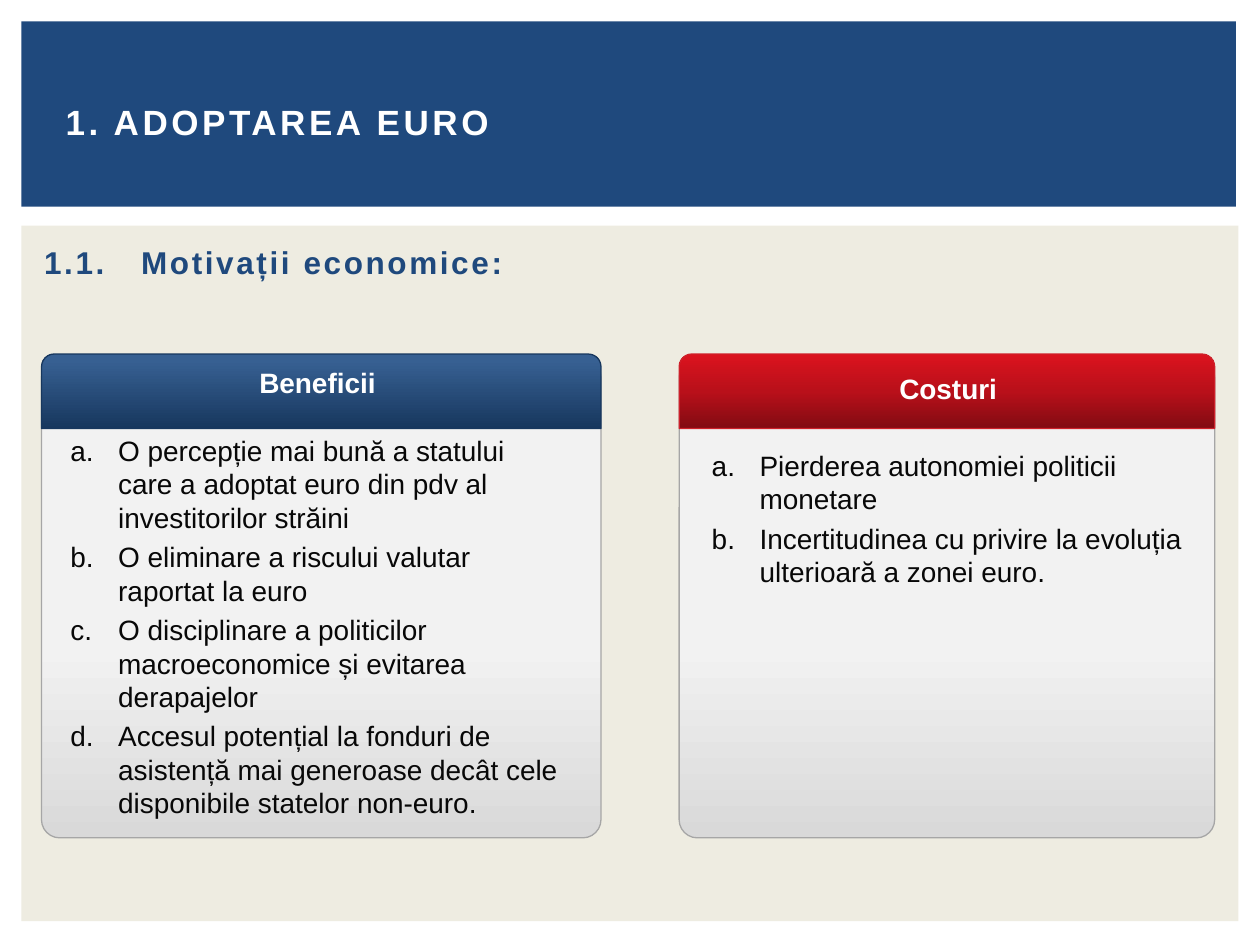
from copy import deepcopy

from lxml.etree import SubElement
from pptx import Presentation
from pptx.dml.color import RGBColor
from pptx.enum.shapes import MSO_SHAPE
from pptx.enum.text import MSO_ANCHOR, MSO_AUTO_SIZE, PP_ALIGN
from pptx.oxml.ns import qn
from pptx.util import Inches, Pt

COLORS = {
    "navy": "1F497D", "cream": "EEECE1", "white": "FFFFFF", "ink": "080808",
    "card line": "A6A6A6", "blue line": "17375E", "red line": "CE202A",
}
# Gradients run from bottom to top: (share of the height, colour)
CARD_GRADIENT = [(0, "D9D9D9"), (0.4, "F2F2F2"), (1, "F2F2F2")]
BLUE_GRADIENT = [(0, "17375E"), (0.91, "376092"), (1, "376092")]
RED_GRADIENT = [(0, "820B12"), (0.5, "B9101A"), (1, "DB131E")]

presentation = Presentation()
presentation.slide_width, presentation.slide_height = Inches(10), Inches(7.5)
COLUMN = presentation.slide_width / 100
ROW = presentation.slide_height / 75


def place(left, top, width, height):
    """Turn columns and rows of the 100 by 75 grid into slide lengths."""
    return [round(n * unit) for n, unit in
            zip((left, top, width, height), (COLUMN, ROW, COLUMN, ROW))]


def write_text(shape, lines, size=16, color="ink", bold=False, spacing=0, wrap=True,
               align=PP_ALIGN.LEFT, anchor=MSO_ANCHOR.TOP, before=3.2,
               margin=0, indent=0, numbering=None):
    """Fill a shape with one paragraph a line; margin and indent are in columns."""
    frame = shape.text_frame
    frame.text = "\n".join(lines)
    frame.word_wrap = wrap
    frame.auto_size = MSO_AUTO_SIZE.NONE
    frame.vertical_anchor = anchor
    for paragraph in frame.paragraphs:
        paragraph.alignment = align
        paragraph.space_before = Pt(before)
        properties = paragraph._p.get_or_add_pPr()
        properties.set("marL", str(round(margin * COLUMN)))
        properties.set("indent", str(round(indent * COLUMN)))
        if numbering:
            SubElement(properties, qn("a:buFont"), typeface="+mj-lt")
            SubElement(properties, qn("a:buAutoNum"), type=numbering)
        else:
            SubElement(properties, qn("a:buNone"))
        run = paragraph.runs[0]
        run.font.name, run.font.size, run.font.bold = "Arial", Pt(size), bold
        run.font.color.rgb = RGBColor.from_string(COLORS[color])
        run._r.get_or_add_rPr().set("spc", str(round(spacing * 100)))


slide = presentation.slides.add_slide(presentation.slide_layouts[1])
shapes = slide.shapes

# Background panels, behind the placeholders
panels = [("cream", (1.7, 17.9, 96.6, 55.2)), ("navy", (1.7, 1.7, 96.4, 14.7))]
for depth, (color, area) in enumerate(panels, start=2):
    panel = shapes.add_shape(MSO_SHAPE.RECTANGLE, *place(*area))
    panel.shadow.inherit = False
    panel.fill.solid()
    panel.fill.fore_color.rgb = RGBColor.from_string(COLORS[color])
    panel.line.fill.background()
    shapes.element.insert(depth, panel._element)

title, body = shapes.title, slide.placeholders[1]
title.left, title.top, title.width, title.height = place(4.2, 3.9, 91.7, 11.5)
write_text(title, ["1. ADOPTAREA EURO"], size=20, color="white", bold=True, spacing=2,
           anchor=MSO_ANCHOR.MIDDLE, before=0)
body.left, body.top, body.width, body.height = place(2, 18.8, 96.1, 53.3)
write_text(body, ["1.1.\tMotivații economice:"], size=18, color="navy", bold=True,
           spacing=1.5, margin=8.2, indent=-7.7)

cards = [
    {"left": 3.3, "width": 44.4, "heading": "Beneficii", "heading area": (18.8, 28.5, 12.8, 4.5),
     "gradient": BLUE_GRADIENT, "line": "blue line", "list area": (4.6, 33.9, 41.2, 32.2),
     "items": ["O percepție mai bună a statului care a adoptat euro din pdv al investitorilor străini",
               "O eliminare a riscului valutar raportat la euro",
               "O disciplinare a politicilor macroeconomice și evitarea derapajelor",
               "Accesul potențial la fonduri de asistență mai generoase decât cele "
               "disponibile statelor non-euro."]},
    {"left": 53.9, "width": 42.5, "heading": "Costuri", "heading area": (70.3, 29, 9.9, 3.7),
     "gradient": RED_GRADIENT, "line": "red line", "list area": (55.5, 35.1, 39.5, 14.7),
     "items": ["Pierderea autonomiei politicii monetare",
               "Incertitudinea cu privire la evoluția ulterioară a zonei euro."]},
]

for card in cards:
    parts = [
        (MSO_SHAPE.ROUNDED_RECTANGLE, 28.5, 38, 0.038, CARD_GRADIENT, "card line"),
        (MSO_SHAPE.ROUND_2_SAME_RECTANGLE, 28.1, 5.9, 0.17, card["gradient"], card["line"]),
    ]
    for kind, top, height, corner, gradient, line in parts:
        part = shapes.add_shape(kind, *place(card["left"], top, card["width"], height))
        part.adjustments[0] = corner
        part.shadow.inherit = False
        part.line.color.rgb = RGBColor.from_string(COLORS[line])
        part.line.width = Pt(0.75)
        part.fill.gradient()
        part.fill.gradient_angle = 90
        stop_list = part._element.spPr.find(qn("a:gradFill")).find(qn("a:gsLst"))
        stop_list.append(deepcopy(stop_list[-1]))
        for stop, (position, color) in zip(part.fill.gradient_stops, gradient):
            stop.position = position
            stop.color.rgb = RGBColor.from_string(color)

    heading = shapes.add_textbox(*place(*card["heading area"]))
    write_text(heading, [card["heading"]], color="white", bold=True, wrap=False,
               align=PP_ALIGN.CENTER)
    item_list = shapes.add_textbox(*place(*card["list area"]))
    write_text(item_list, card["items"], margin=3.8, indent=-3.8, numbering="alphaLcPeriod")

presentation.save("out.pptx")
